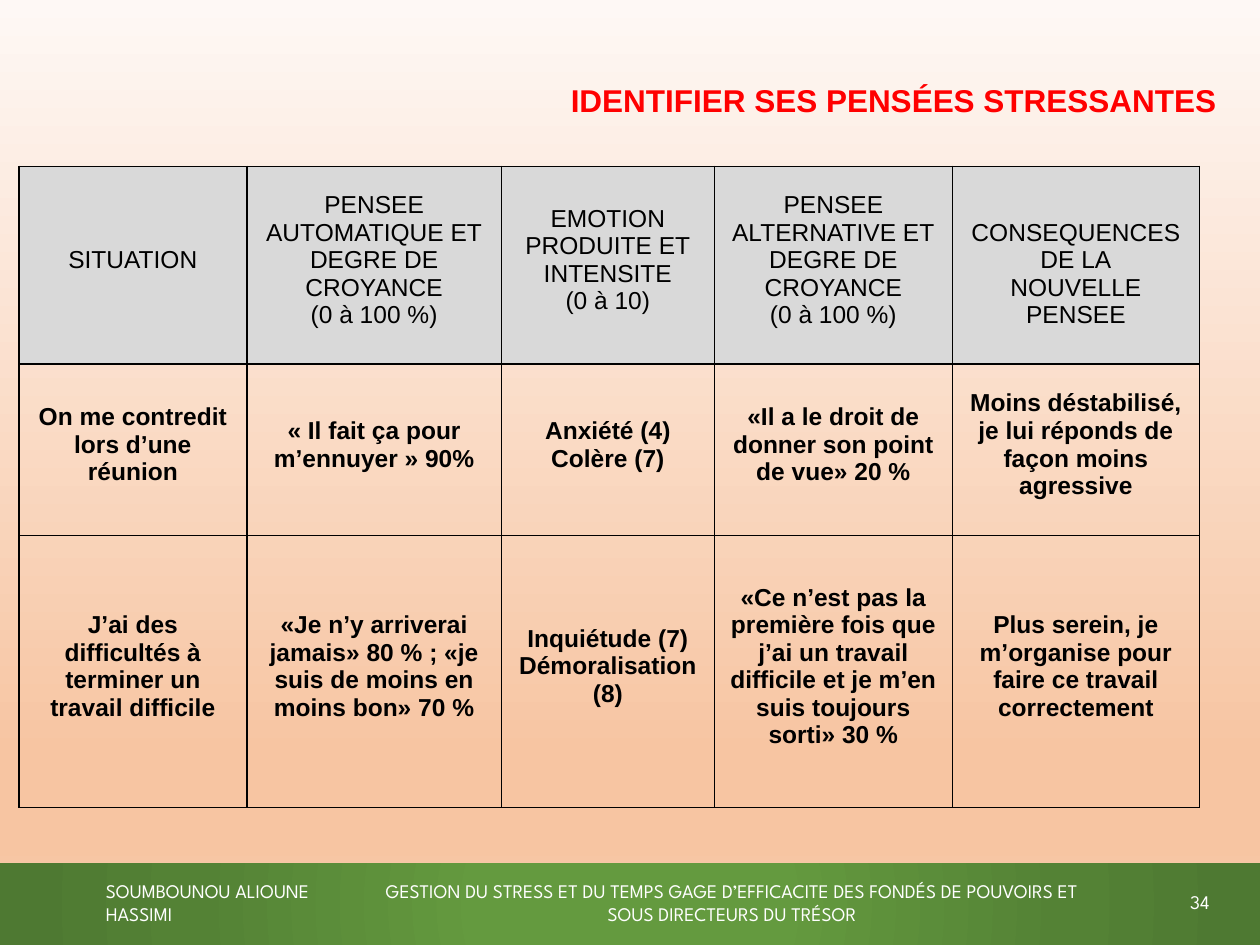
"""Build the slide on identifying stressful thoughts, with its table and footer."""
from pptx import Presentation
from pptx.dml.color import RGBColor
from pptx.enum.shapes import MSO_SHAPE
from pptx.enum.text import MSO_ANCHOR, MSO_AUTO_SIZE, PP_ALIGN
from pptx.oxml import parse_xml
from pptx.oxml.ns import nsdecls, qn
from pptx.util import Inches, Pt

RED = RGBColor(0xFF, 0x00, 0x00)
WHITE = RGBColor(0xFF, 0xFF, 0xFF)
BLACK = RGBColor(0x00, 0x00, 0x00)
GREY = RGBColor(0xD9, 0xD9, 0xD9)

PEACH_STOPS = [(0, "FEF8F5"), (80, "F7C5A2"), (90, "F7C5A2"), (100, "FAD8C1")]
GREEN_STOPS = [(0, "649A3F"), (23, "649A3F"), (69, "548235"), (97, "4E7932")]
DOWNWARD = '<a:lin ang="5400000" scaled="0"/>'
FROM_CENTRE = ('<a:path path="circle"><a:fillToRect l="50000" t="50000" '
               'r="50000" b="50000"/></a:path>')

TITLE = "IDENTIFIER SES PENSÉES STRESSANTES"
COLUMN_WIDTHS = [1.81, 2.02, 1.69, 1.89, 1.96]
ROW_HEIGHTS = [1.57, 1.36, 2.16]
ROWS = [
    [["SITUATION"],
     ["PENSEE\nAUTOMATIQUE ET\nDEGRE DE\nCROYANCE", "(0 à 100 %)"],
     ["EMOTION\nPRODUITE ET\nINTENSITE", "(0 à 10)"],
     ["PENSEE\nALTERNATIVE ET\nDEGRE DE\nCROYANCE", "(0 à 100 %)"],
     ["CONSEQUENCES\nDE LA\nNOUVELLE\nPENSEE"]],
    [["On me contredit\nlors d’une\nréunion"],
     ["« Il fait ça pour\nm’ennuyer » 90%"],
     ["Anxiété (4)", "Colère (7)"],
     ["«Il a le droit de\ndonner son point\nde vue» 20 %"],
     ["Moins déstabilisé,\nje lui réponds de\nfaçon moins\nagressive"]],
    [["J’ai des\ndifficultés à\nterminer un\ntravail difficile"],
     ["«Je n’y arriverai\njamais» 80 % ; «je\nsuis de moins en\nmoins bon» 70 %"],
     ["Inquiétude (7)\nDémoralisation\n(8)"],
     ["«Ce n’est pas la\npremière fois que\nj’ai un travail\ndifficile et je m’en\n"
      "suis toujours\nsorti» 30 %"],
     ["Plus serein, je\nm’organise pour\nfaire ce travail\ncorrectement"]],
]
FOOTERS = [
    (0.84, 2.03, PP_ALIGN.LEFT, "SOUMBOUNOU ALIOUNE HASSIMI"),
    (2.92, 5.78, PP_ALIGN.CENTER, "GESTION DU STRESS ET DU TEMPS GAGE D’EFFICACITE "
     "DES FONDÉS DE POUVOIRS ET SOUS DIRECTEURS DU TRÉSOR"),
    (8.87, 0.73, PP_ALIGN.RIGHT, "34"),
]


def set_gradient(owner, stops, direction):
    owner.fill.gradient()
    element = owner.element if hasattr(owner, "element") else owner
    replace_gradient(element, stops, direction)


def replace_gradient(element, stops, direction):
    stop_xml = "".join(f'<a:gs pos="{position * 1000}"><a:srgbClr val="{color}"/></a:gs>'
                       for position, color in stops)
    gradient = parse_xml(f'<a:gradFill {nsdecls("a")} rotWithShape="1">'
                         f'<a:gsLst>{stop_xml}</a:gsLst>{direction}</a:gradFill>')
    current = element.find(".//" + qn("a:gradFill"))
    current.getparent().replace(current, gradient)


def write_paragraph(paragraph, text, alignment, font_name, size, color, bold=False):
    paragraph.alignment = alignment
    for index, line in enumerate(text.split("\n")):
        if index:
            paragraph.add_line_break()
        run = paragraph.add_run()
        run.text = line
        run.font.name = font_name
        run.font.size = Pt(size)
        run.font.bold = bold
        run.font.color.rgb = color


def prepare_frame(frame, wrap):
    frame.margin_left = frame.margin_right = frame.margin_bottom = 0
    frame.margin_top = Inches(0.02)
    frame.vertical_anchor = MSO_ANCHOR.MIDDLE
    frame.auto_size = MSO_AUTO_SIZE.NONE
    frame.word_wrap = wrap


def add_borders(cell):
    properties = cell._tc.get_or_add_tcPr()
    for side in ("lnL", "lnR", "lnT", "lnB"):
        properties.append(parse_xml(
            f'<a:{side} {nsdecls("a")} w="{Pt(1)}"><a:solidFill>'
            f'<a:srgbClr val="{BLACK}"/></a:solidFill></a:{side}>'))


def add_thought_table(slide):
    table = slide.shapes.add_table(
        len(ROWS), len(COLUMN_WIDTHS), Inches(0.15), Inches(1.32),
        Inches(sum(COLUMN_WIDTHS)), Inches(sum(ROW_HEIGHTS))).table
    table.first_row = table.horz_banding = False
    for column, width in zip(table.columns, COLUMN_WIDTHS):
        column.width = Inches(width)
    for row_index, (row, height) in enumerate(zip(ROWS, ROW_HEIGHTS)):
        table.rows[row_index].height = Inches(height)
        is_header = row_index == 0
        for column_index, texts in enumerate(row):
            cell = table.cell(row_index, column_index)
            add_borders(cell)
            if is_header:
                cell.fill.solid()
                cell.fill.fore_color.rgb = GREY
            else:
                cell.fill.background()
            cell.margin_left = cell.margin_right = cell.margin_top = 0
            cell.margin_bottom = Inches(0.08)
            cell.vertical_anchor = MSO_ANCHOR.MIDDLE
            frame = cell.text_frame
            for index, text in enumerate(texts):
                paragraph = frame.add_paragraph() if index else frame.paragraphs[0]
                write_paragraph(paragraph, text, PP_ALIGN.CENTER, "Arial", 14, BLACK,
                                not is_header)
    table.cell(0, len(COLUMN_WIDTHS) - 1).margin_top = Inches(0.22)


def main():
    presentation = Presentation()
    presentation.slide_width, presentation.slide_height = Inches(10), Inches(7.5)
    slide = presentation.slides.add_slide(presentation.slide_layouts[5])
    slide.background.fill.gradient()
    replace_gradient(slide.element, PEACH_STOPS, DOWNWARD)

    band = slide.shapes.add_shape(MSO_SHAPE.RECTANGLE, 0, Inches(6.85),
                                  Inches(10), Inches(0.65))
    band.shadow.inherit = False
    band.line.fill.background()
    set_gradient(band, GREEN_STOPS, FROM_CENTRE)

    title = slide.shapes.title
    title.left, title.top = Inches(4.53), Inches(0.62)
    title.width, title.height = Inches(5.15), Inches(0.33)
    prepare_frame(title.text_frame, False)
    write_paragraph(title.text_frame.paragraphs[0], TITLE, PP_ALIGN.LEFT,
                    "Arial", 18, RED, True)

    for left, width, alignment, text in FOOTERS:
        box = slide.shapes.add_textbox(Inches(left), Inches(6.95), Inches(width), Inches(0.4))
        prepare_frame(box.text_frame, True)
        write_paragraph(box.text_frame.paragraphs[0], text, alignment,
                        "League Spartan", 11, WHITE)

    add_thought_table(slide)
    presentation.save("out.pptx")


if __name__ == "__main__":
    main()
